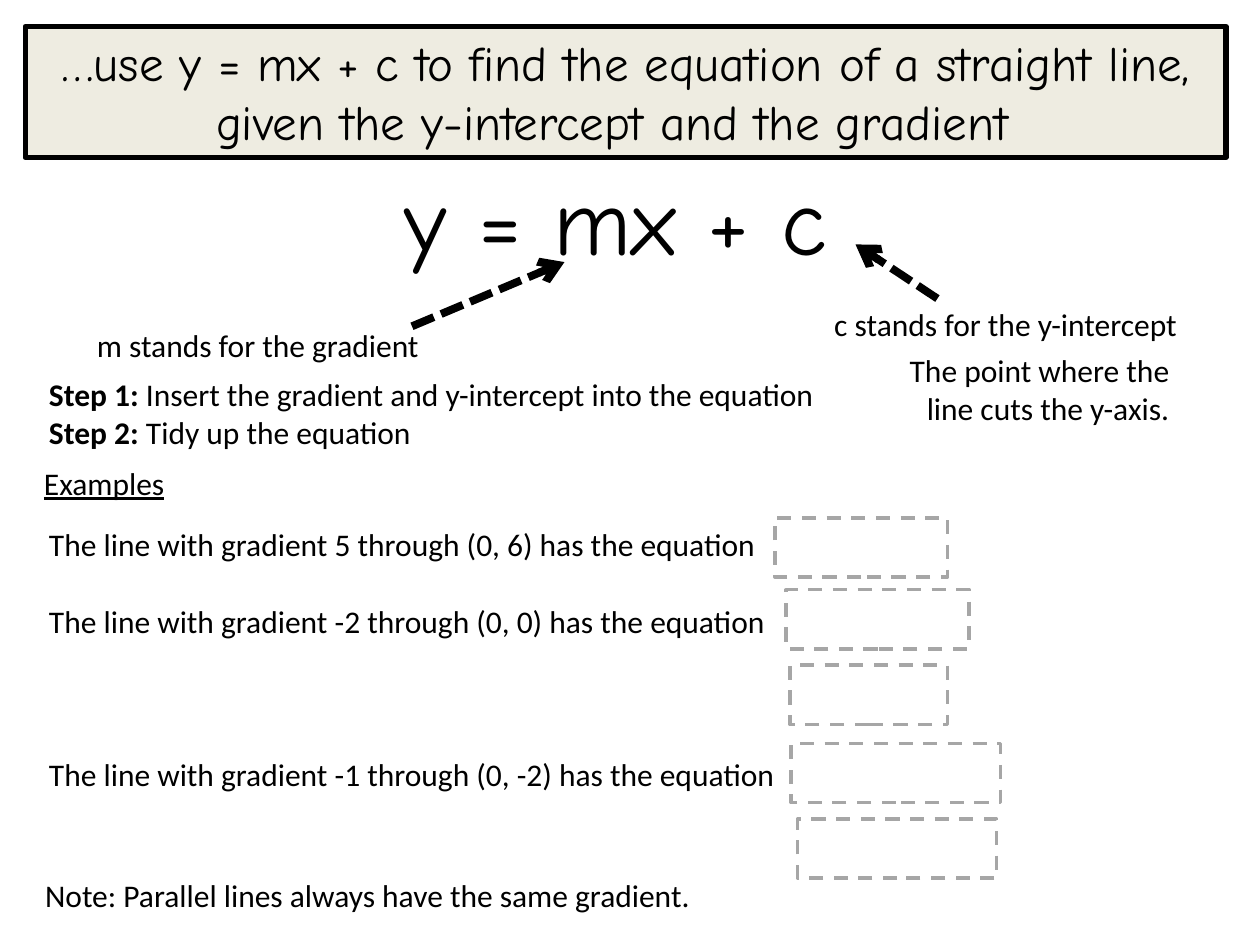
from dataclasses import dataclass

from lxml.etree import SubElement
from pptx import Presentation
from pptx.dml.color import RGBColor
from pptx.enum.dml import MSO_LINE_DASH_STYLE as Dash
from pptx.enum.shapes import MSO_CONNECTOR as Connector, MSO_SHAPE as Shape
from pptx.enum.text import MSO_ANCHOR as Anchor, MSO_AUTO_SIZE as AutoSize, PP_ALIGN as Align
from pptx.oxml.ns import qn
from pptx.util import Inches, Pt

BLACK = RGBColor(0x00, 0x00, 0x00)
CREAM = RGBColor(0xEE, 0xEC, 0xE1)
GREY = RGBColor(0xA6, 0xA6, 0xA6)
BODY_FONT, DISPLAY_FONT = "Calibri", "Comic Neue"
CELL = Inches(0.1)
COLUMNS, ROWS = 100, 75
LINE_HEIGHT = 22


@dataclass
class Box:
    """A region measured in grid columns and rows."""
    col: float
    row: float
    cols: float
    rows: float

    def inner(self, col, row, cols=0, rows=0):
        """Return a box placed relative to this one."""
        return Box(self.col + col, self.row + row, cols, rows)

    def lengths(self):
        """Return left, top, width and height as slide lengths."""
        return [round(cells * CELL) for cells in (self.col, self.row, self.cols, self.rows)]


def add_run(paragraph, text, size=18, font=BODY_FONT, bold=False, underline=False):
    """Append one styled run to a paragraph."""
    run = paragraph.add_run()
    run.text = text
    run.font.size, run.font.name = Pt(size), font
    run.font.bold, run.font.underline = bold, underline
    run.font.color.rgb = BLACK


def add_text_frame(slide, box, wrap=True):
    """Place an empty text box and return its frame."""
    frame = slide.shapes.add_textbox(*box.lengths()).text_frame
    frame.word_wrap, frame.auto_size = wrap, AutoSize.SHAPE_TO_FIT_TEXT
    return frame


def add_label(slide, box, text, wrap=True, align=Align.LEFT, **style):
    """Place a single-paragraph text box."""
    frame = add_text_frame(slide, box, wrap)
    frame.paragraphs[0].alignment = align
    add_run(frame.paragraphs[0], text, **style)


def add_rectangle(slide, box, line_color, line_width):
    """Place an outlined rectangle without fill or shadow."""
    rectangle = slide.shapes.add_shape(Shape.RECTANGLE, *box.lengths())
    rectangle.shadow.inherit = False
    rectangle.fill.background()
    rectangle.line.color.rgb, rectangle.line.width = line_color, Pt(line_width)
    return rectangle


def add_pointer(slide, start, end):
    """Draw a dashed arrow between two grid points."""
    ends = start.lengths()[:2] + end.lengths()[:2]
    pointer = slide.shapes.add_connector(Connector.STRAIGHT, *ends)
    pointer.line.color.rgb, pointer.line.width = BLACK, Pt(4.5)
    pointer.line.dash_style = Dash.SQUARE_DOT
    properties = pointer._element.spPr
    SubElement(properties.find(qn("a:ln")), qn("a:tailEnd"), type="arrow")
    SubElement(properties, qn("a:effectLst"))


def build_objective(slide, box):
    """Build the framed learning objective."""
    banner = add_rectangle(slide, box, BLACK, 3)
    banner.fill.solid()
    banner.fill.fore_color.rgb = CREAM
    frame = banner.text_frame
    frame.word_wrap, frame.vertical_anchor = True, Anchor.TOP
    frame.paragraphs[0].alignment = Align.CENTER
    objective = ("…use y = mx + c to find the equation of a straight line, "
                 "given the y-intercept and the gradient\t")
    add_run(frame.paragraphs[0], objective, 28, DISPLAY_FONT)


def build_formula(slide, box):
    """Build the formula with the meaning of m and c."""
    add_label(slide, box.inner(31.1, 0, 36.8, 10.1), "y = mx + c", False,
              size=54, font=DISPLAY_FONT)
    add_pointer(slide, box.inner(32.7, 13.6), box.inner(44.8, 8.5))
    add_pointer(slide, box.inner(74.4, 11.4), box.inner(67.9, 7.1))
    add_label(slide, box.inner(6.7, 13.1, 27.9, 4), "m stands for the gradient", False)
    add_label(slide, box.inner(63.7, 11.4, 30.7, 4), "c stands for the y-intercept",
              align=Align.RIGHT)
    add_label(slide, box.inner(67.4, 15.1, 26.4, 7.1),
              "The point where the line cuts the y-axis.", align=Align.RIGHT)


def build_steps(slide, box):
    """Build the numbered steps of the method."""
    frame = add_text_frame(slide, box, False)
    steps = ("Insert the gradient and y-intercept into the equation", "Tidy up the equation")
    for number, step in enumerate(steps, 1):
        paragraph = frame.paragraphs[0] if number == 1 else frame.add_paragraph()
        add_run(paragraph, f"Step {number}: ", bold=True)
        add_run(paragraph, step)


def build_examples(slide, box):
    """Build the worked examples with their answer frames and the note."""
    add_label(slide, box.inner(0, 0, 14.1, 4), "Examples", underline=True)
    frame = add_text_frame(slide, box.inner(0.4, 4.9, 83.8, 22.2))
    examples = ((5, "(0, 6)", 0), (-2, "(0, 0)", 1), (-1, "(0, -2)", 3))
    for index, (gradient, point, lines_before) in enumerate(examples):
        paragraph = frame.add_paragraph() if index else frame.paragraphs[0]
        paragraph.space_before = Pt(lines_before * LINE_HEIGHT)
        add_run(paragraph, f"The line with gradient {gradient} through {point} has the equation")
    answers = ((59, 4.8, 13.7), (59.9, 10.5, 14.5), (60.2, 16.5, 12.5),
               (60.3, 22.7, 16.6), (60.8, 28.7, 15.8))
    for col, row, cols in answers:
        answer = add_rectangle(slide, box.inner(col, row, cols, 4.7), GREY, 2)
        answer.line.dash_style = Dash.DASH
    add_label(slide, box.inner(0.1, 32.7, 53.8, 4),
              "Note: Parallel lines always have the same gradient.", False)


def main():
    """Build and save the slide."""
    deck = Presentation()
    deck.slide_width, deck.slide_height = COLUMNS * CELL, ROWS * CELL
    slide = deck.slides.add_slide(deck.slide_layouts[6])
    build_objective(slide, Box(2, 2.1, 95.3, 10.4))
    build_formula(slide, Box(0, 12.3, COLUMNS, 22.2))
    build_steps(slide, Box(2.9, 29.3, 64.4, 7.1))
    build_examples(slide, Box(2.5, 36.3, 95, 36.7))
    deck.save("out.pptx")


if __name__ == "__main__":
    main()
